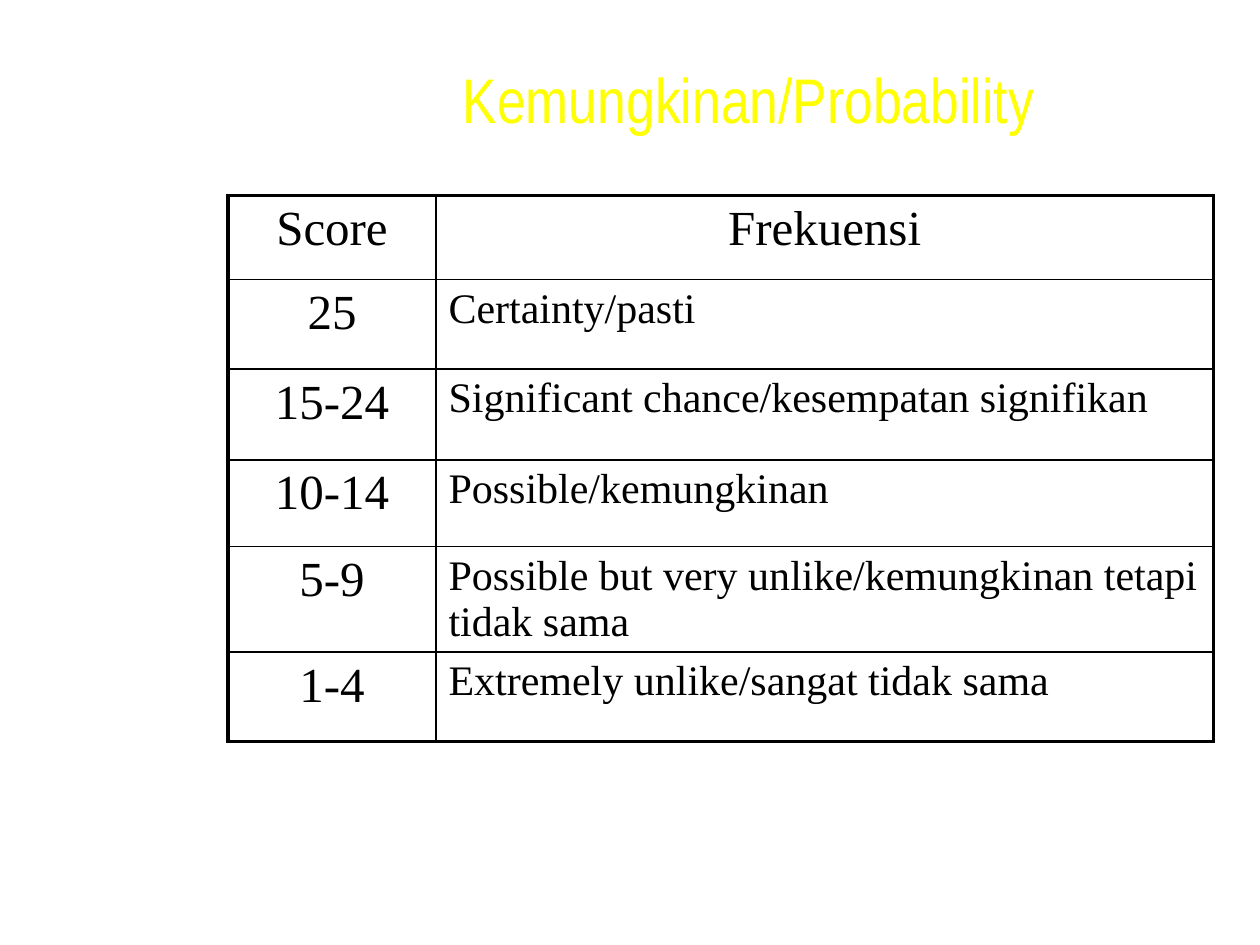
from lxml import etree
from pptx import Presentation
from pptx.dml.color import RGBColor
from pptx.enum.text import MSO_ANCHOR, MSO_AUTO_SIZE, PP_ALIGN
from pptx.oxml.ns import qn
from pptx.util import Pt

# Content
TITLE = "Kemungkinan/Probability"
ROWS = [
    ("Score", "Frekuensi"),
    ("25", "Certainty/pasti"),
    ("15-24", "Significant chance/kesempatan signifikan"),
    ("10-14", "Possible/kemungkinan"),
    ("5-9", "Possible but very unlike/kemungkinan tetapi tidak sama"),
    ("1-4", "Extremely unlike/sangat tidak sama"),
]
COLORS = {"title": "FFFF00", "ink": "000000"}
COLUMN_WIDTHS = [118.8, 444.24]
ROW_HEIGHTS = [48.24, 51.12, 51.84, 49.68, 51.84, 51.12]
INNER, OUTER = 1, 2.25


def write(frame, text, font="Times New Roman", size=24, color="ink", align=PP_ALIGN.LEFT):
    para = frame.paragraphs[0]
    para.alignment = align
    span = para.add_run()
    span.text = text
    span.font.name = font
    span.font.size = Pt(size)
    span.font.color.rgb = RGBColor.from_string(COLORS[color])


def draw_borders(cell, widths):
    properties = cell._tc.get_or_add_tcPr()
    for position, (side, width) in enumerate(widths.items()):
        line = etree.Element(qn(f"a:ln{side}"), w=str(int(Pt(width))))
        fill = etree.SubElement(line, qn("a:solidFill"))
        etree.SubElement(fill, qn("a:srgbClr"), val=COLORS["ink"])
        properties.insert(position, line)


deck = Presentation()
deck.slide_width, deck.slide_height = Pt(720), Pt(540)
page = deck.slides.add_slide(deck.slide_layouts[5])

# Title
title = page.shapes.title
title.left, title.top, title.width, title.height = Pt(158.4), Pt(25.92), Pt(538.56), Pt(73.44)
frame = title.text_frame
frame.word_wrap = False
frame.auto_size = MSO_AUTO_SIZE.NONE
frame.vertical_anchor = MSO_ANCHOR.TOP
frame.margin_top = Pt(8.5)
write(frame, TITLE, font="Arial Narrow", size=36, color="title", align=PP_ALIGN.CENTER)

# Score table
table = page.shapes.add_table(
    len(ROWS), len(COLUMN_WIDTHS), Pt(130.32), Pt(111.6),
    Pt(sum(COLUMN_WIDTHS)), Pt(sum(ROW_HEIGHTS)),
).table
table.first_row = table.horz_banding = False
for column, width in zip(table.columns, COLUMN_WIDTHS):
    column.width = Pt(width)
for row, height in zip(table.rows, ROW_HEIGHTS):
    row.height = Pt(height)

last_row, last_column = len(ROWS) - 1, len(COLUMN_WIDTHS) - 1
for r, texts in enumerate(ROWS):
    for c, text in enumerate(texts):
        cell = table.cell(r, c)
        cell.fill.background()
        heading = r == 0 or c == 0
        write(cell.text_frame, text, size=28 if heading else 24,
              align=PP_ALIGN.CENTER if heading else PP_ALIGN.LEFT)
        on_edge = {"L": c == 0, "R": c == last_column, "T": r == 0, "B": r == last_row}
        draw_borders(cell, {side: OUTER if edge else INNER for side, edge in on_edge.items()})

deck.save("out.pptx")
